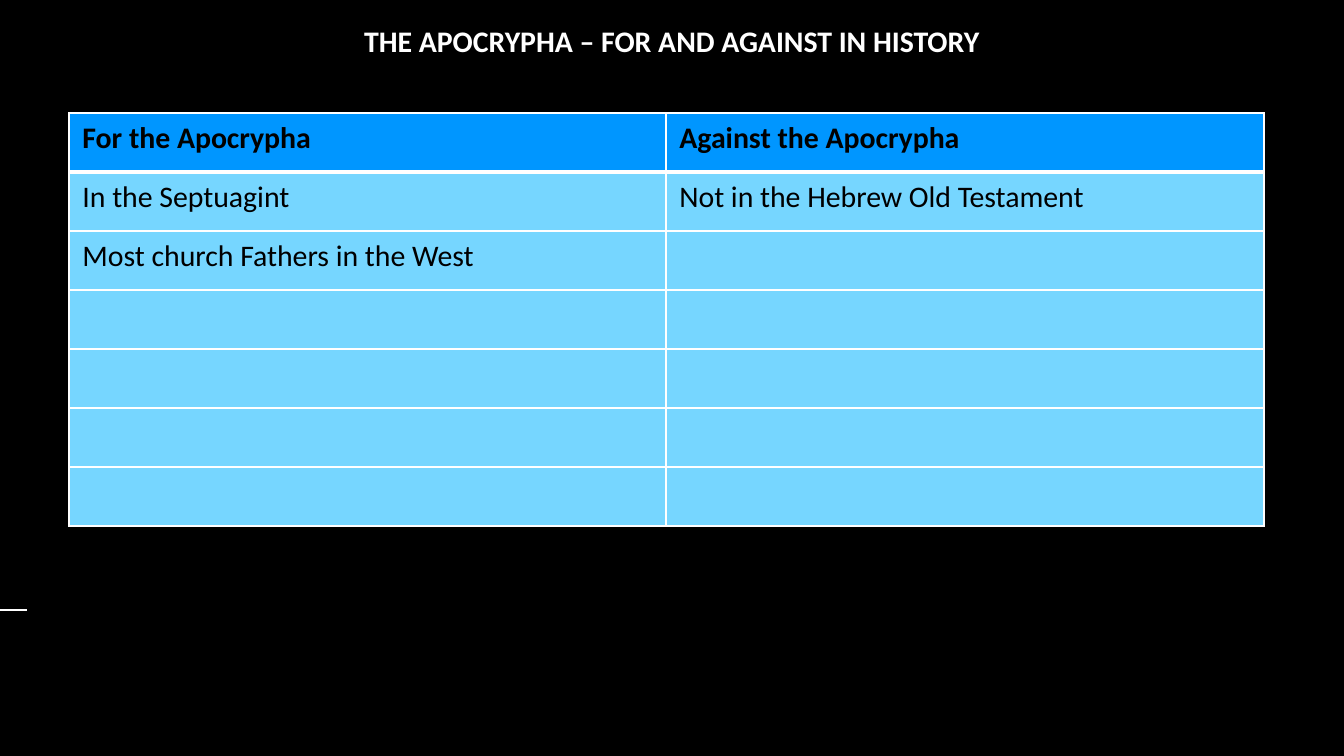
from dataclasses import dataclass

from lxml import etree
from pptx import Presentation
from pptx import util as u
from pptx.dml.color import RGBColor
from pptx.enum import shapes, text
from pptx.oxml.ns import qn

EMU_PER_PX = 914400 / 134.4
WHITE, BLACK = "FFFFFF", "000000"
HEADER_BLUE, BODY_BLUE = "0096FF", "76D6FF"
ROW_HEIGHT = 59
COLUMN_WIDTHS = (597, 598)


@dataclass
class Argument:
    pro: str = ""
    contra: str = ""


ARGUMENTS = [
    Argument("For the Apocrypha", "Against the Apocrypha"),
    Argument("In the Septuagint", "Not in the Hebrew Old Testament"),
    Argument("Most church Fathers in the West"),
    *[Argument() for _ in range(4)],
]


def px(length: int) -> u.Emu:
    return u.Emu(round(length * EMU_PER_PX))


def color(value: str) -> RGBColor:
    return RGBColor.from_string(value)


def write(frame, content: str, *, ink: str = BLACK, size: int = 16,
          bold: bool = False, align=text.PP_ALIGN.LEFT) -> None:
    paragraph = frame.paragraphs[0]
    paragraph.alignment = align
    paragraph.font.size = u.Pt(size)
    if content:
        run = paragraph.add_run()
        run.text = content
        run.font.name = "Calibri"
        run.font.size = u.Pt(size)
        run.font.bold = bold
        run.font.color.rgb = color(ink)


def set_borders(cell, top: int, bottom: int) -> None:
    properties = cell._tc.get_or_add_tcPr()
    widths = {"a:lnL": 1, "a:lnR": 1, "a:lnT": top, "a:lnB": bottom}
    for position, (tag, width) in enumerate(widths.items()):
        border = etree.Element(qn(tag), w=str(u.Pt(width)))
        fill = etree.SubElement(border, qn("a:solidFill"))
        etree.SubElement(fill, qn("a:srgbClr"), val=WHITE)
        properties.insert(position, border)


def draw_title(slide) -> None:
    title = slide.shapes.add_textbox(px(338), px(16), px(668), px(46))
    title.text_frame.word_wrap = True
    write(title.text_frame, "THE APOCRYPHA – FOR AND AGAINST IN HISTORY",
          ink=WHITE, bold=True, align=text.PP_ALIGN.CENTER)


def draw_edge_line(slide) -> None:
    edge = slide.shapes.add_connector(
        shapes.MSO_CONNECTOR.STRAIGHT, px(-22), px(610), px(27), px(610))
    edge.line.color.rgb = color(WHITE)
    edge.line.width = u.Pt(0.75)
    etree.SubElement(edge._element.spPr, qn("a:effectLst"))


def draw_arguments(slide, arguments: list[Argument]) -> None:
    table = slide.shapes.add_table(
        len(arguments), len(COLUMN_WIDTHS), px(69), px(113),
        px(sum(COLUMN_WIDTHS)), px(ROW_HEIGHT * len(arguments))).table
    for column, width in zip(table.columns, COLUMN_WIDTHS):
        column.width = px(width)
    for index, argument in enumerate(arguments):
        is_header = index == 0
        table.rows[index].height = px(ROW_HEIGHT)
        for cell, content in zip(table.rows[index].cells,
                                 (argument.pro, argument.contra)):
            cell.fill.solid()
            cell.fill.fore_color.rgb = color(HEADER_BLUE if is_header else BODY_BLUE)
            write(cell.text_frame, content, bold=is_header)
            set_borders(cell, top=3 if index == 1 else 1,
                        bottom=3 if is_header else 1)


def main() -> None:
    deck = Presentation()
    deck.slide_width, deck.slide_height = px(1344), px(756)
    slide = deck.slides.add_slide(deck.slide_layouts[6])
    slide.background.fill.solid()
    slide.background.fill.fore_color.rgb = color(BLACK)
    draw_edge_line(slide)
    draw_title(slide)
    draw_arguments(slide, ARGUMENTS)
    deck.save("out.pptx")


if __name__ == "__main__":
    main()
